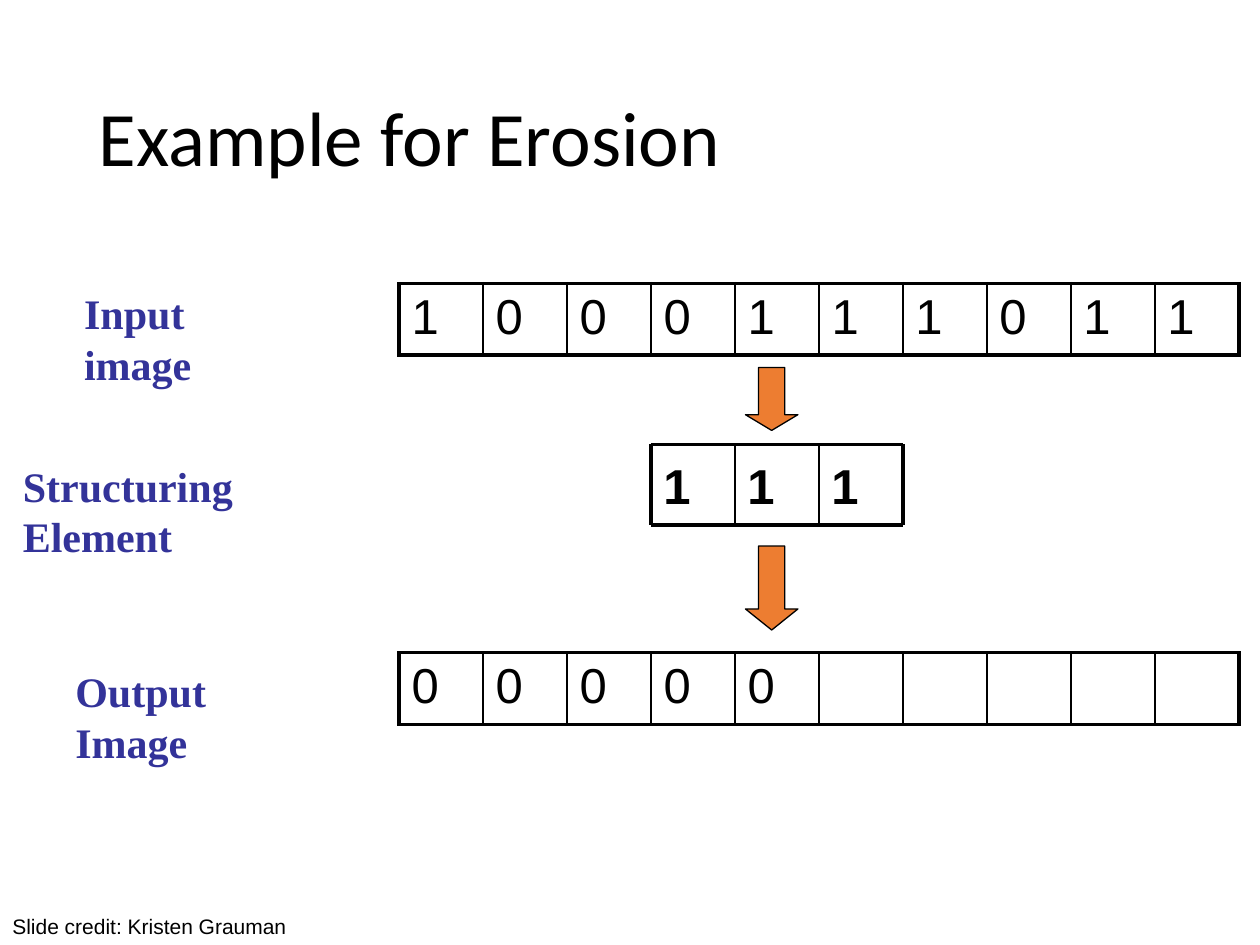
from lxml import etree
from pptx import Presentation
from pptx.dml.color import RGBColor
from pptx.enum import shapes, text
from pptx.oxml import parse_xml
from pptx.oxml.ns import nsdecls, qn
from pptx.util import Pt

BLACK = RGBColor(0, 0, 0)
BLUE = RGBColor(0x33, 0x33, 0x99)
ORANGE = RGBColor(0xED, 0x7D, 0x31)
CELL, ROW_H = 48, 40.5
GRID_X = 228
THICK, THIN = 2.25, 1

prs = Presentation()
prs.slide_width, prs.slide_height = Pt(720), Pt(540)
s = prs.slides.add_slide(prs.slide_layouts[6])


def add_text(words, x, y, w, h, name, size, color=BLACK, bold=False):
    tf = s.shapes.add_textbox(Pt(x), Pt(y), Pt(w), Pt(h)).text_frame
    tf.word_wrap = True
    p = tf.paragraphs[0]
    p.text = words
    p.font.name, p.font.size, p.font.bold = name, Pt(size), bold
    p.font.color.rgb = color
    return tf


def set_border(cell, side, width):
    """Draw one side ("L", "R", "T" or "B") of a table cell in black."""
    cell._tc.get_or_add_tcPr().append(parse_xml(
        f'<a:ln{side} {nsdecls("a")} w="{int(Pt(width))}"><a:solidFill>'
        f'<a:srgbClr val="{BLACK}"/></a:solidFill></a:ln{side}>'))


# Title
tf = add_text("Example for Erosion", 49.5, 28.8, 621, 104.4, "Calibri", 44)
tf.vertical_anchor = text.MSO_ANCHOR.MIDDLE
tf.paragraphs[0].line_spacing = 0.9

# Row labels
for words, x, y, w in [("Input image", 41, 160.5, 129.6),
                       ("Structuring Element", 6, 259.2, 208),
                       ("Output Image", 36, 376.5, 146.9)]:
    tf = add_text(words, x, y, w, 65, "Times New Roman", 24, BLUE, True)
    tf.paragraphs[0].line_spacing = Pt(29)

# Input and output rows
for y, values in [(162, "1000111011"), (373, "00000     ")]:
    n = len(values)
    frame = s.shapes.add_table(1, n, Pt(GRID_X), Pt(y), Pt(n * CELL), Pt(ROW_H))
    table = frame.table
    table.first_row = table.horz_banding = False
    for i, value in enumerate(values):
        table.columns[i].width = Pt(CELL)
        cell = table.cell(0, i)
        set_border(cell, "L", THICK if i == 0 else THIN)
        set_border(cell, "R", THICK if i == n - 1 else THIN)
        set_border(cell, "T", THICK)
        set_border(cell, "B", THICK)
        cell.fill.background()
        p = cell.text_frame.paragraphs[0]
        p.text = value.strip()
        p.font.name, p.font.size = "Arial", Pt(28)
        p.font.color.rgb = BLACK

# Structuring element, under the input cells it covers
left, top, bottom = GRID_X + 3 * CELL, 254, 300
right = left + 3 * CELL
for i in range(3):
    tf = add_text("1", left + i * CELL, top, CELL, bottom - top, "Arial", 28, bold=True)
    tf.margin_top = Pt(6)

edges = [(left, y, right, y, THICK) for y in (top, bottom)]
edges += [(left + i * CELL, top, left + i * CELL, bottom,
           THICK if i in (0, 3) else THIN) for i in range(4)]
for x1, y1, x2, y2, width in edges:
    line = s.shapes.add_connector(shapes.MSO_CONNECTOR.STRAIGHT,
                                  Pt(x1), Pt(y1), Pt(x2), Pt(y2))
    line.line.color.rgb = BLACK
    line.line.width = Pt(width)
    etree.SubElement(line._element.spPr, qn("a:effectLst"))

# Down arrows between the rows
for y, h, head in [(210, 36, 0.3), (312, 48, 0.4)]:
    sp = s.shapes.add_shape(shapes.MSO_SHAPE.DOWN_ARROW, Pt(426), Pt(y), Pt(30), Pt(h))
    sp.adjustments[0], sp.adjustments[1] = 0.5, head
    sp.shadow.inherit = False
    sp.fill.solid()
    sp.fill.fore_color.rgb = ORANGE
    sp.line.color.rgb = BLACK
    sp.line.width = Pt(0.75)

add_text("Slide credit: Kristen Grauman", 0, 518.5, 330, 21.5, "Arial", 12)

prs.save("out.pptx")
